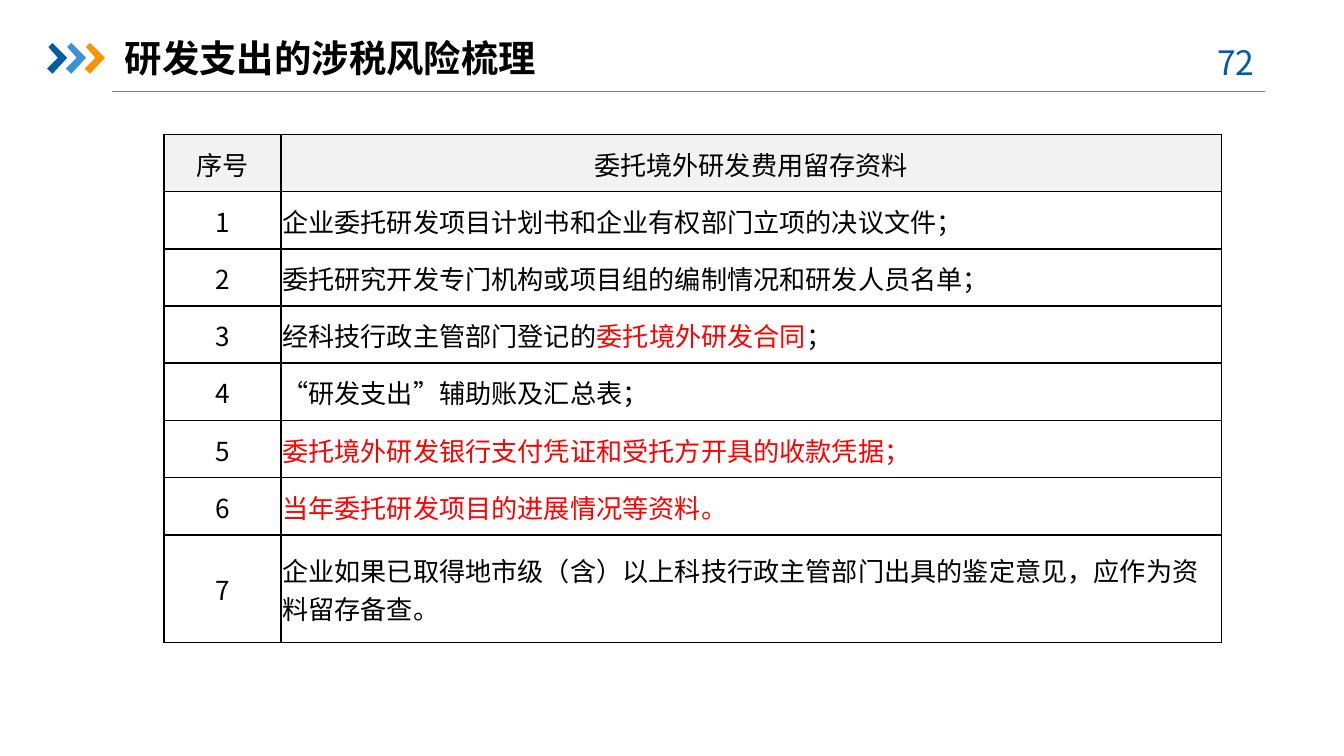
from lxml import etree
from pptx import Presentation
from pptx import util as u
from pptx.dml.color import RGBColor
from pptx.enum import lang, shapes, text
from pptx.oxml import ns

FONT = "Noto Sans CJK SC"
BLACK = RGBColor(0x00, 0x00, 0x00)
WHITE = RGBColor(0xFF, 0xFF, 0xFF)
RED = RGBColor(0xFF, 0x00, 0x00)
GRAY = RGBColor(0x80, 0x80, 0x80)
HEADER_FILL = RGBColor(0xF2, 0xF2, 0xF2)
DEEP_BLUE = RGBColor(0x00, 0x5D, 0xA2)
LIGHT_BLUE = RGBColor(0x39, 0x92, 0xDB)
ORANGE = RGBColor(0xF7, 0x96, 0x00)

HEADER = ("序号", "委托境外研发费用留存资料")
# Each item is a list of (text, colour) spans.
ITEMS = [
    [("企业委托研发项目计划书和企业有权部门立项的决议文件；", BLACK)],
    [("委托研究开发专门机构或项目组的编制情况和研发人员名单；", BLACK)],
    [("经科技行政主管部门登记的", BLACK), ("委托境外研发合同", RED), ("；", BLACK)],
    [("“研发支出”辅助账及汇总表；", BLACK)],
    [("委托境外研发银行支付凭证和受托方开具的收款凭据；", RED)],
    [("当年委托研发项目的进展情况等资料。", RED)],
    [("企业如果已取得地市级（含）以上科技行政主管部门出具的鉴定意见，"
      "应作为资料留存备查。", BLACK)],
]


def set_values(target, values):
    for name, value in values.items():
        setattr(target, name, value)


def write(para, spans, size, align, bold=False):
    """Fill a paragraph with (text, colour) spans."""
    para.alignment = align
    for wording, colour in spans:
        span = para.add_run()
        span.text = wording
        set_values(span.font, {
            "name": FONT, "size": u.Pt(size), "bold": bold,
            "language_id": lang.MSO_LANGUAGE_ID.SIMPLIFIED_CHINESE})
        span.font.color.rgb = colour
        east_asian = etree.SubElement(span._r.get_or_add_rPr(), ns.qn("a:ea"))
        east_asian.set("typeface", FONT)


def add_text(page, box, spans, size, align, bold=False):
    frame = page.shapes.add_textbox(*map(u.Inches, box)).text_frame
    set_values(frame, {"word_wrap": True,
                       "auto_size": text.MSO_AUTO_SIZE.SHAPE_TO_FIT_TEXT})
    write(frame.paragraphs[0], spans, size, align, bold)


def add_chevrons(page, left, top):
    outline = [(0.01, 0.03), (0.04, 0), (0.15, 0.11),
               (0.04, 0.23), (0, 0.19), (0.08, 0.11)]
    for index, colour in enumerate((DEEP_BLUE, LIGHT_BLUE, ORANGE)):
        points = [(u.Inches(left + 0.14 * index + x), u.Inches(top + y))
                  for x, y in outline]
        builder = page.shapes.build_freeform(*points[0])
        builder.add_line_segments(points[1:], close=True)
        chevron = builder.convert_to_shape()
        chevron.shadow.inherit = False
        chevron.fill.solid()
        chevron.fill.fore_color.rgb = colour
        chevron.line.fill.background()


def add_heading(page, left, top, width):
    """Chevrons, title, page number and the rule below them."""
    rule_left, rule_top = left + 0.48, top + 0.47
    rule = page.shapes.add_connector(
        shapes.MSO_CONNECTOR.STRAIGHT,
        *map(u.Inches, (rule_left, rule_top, left + width - 0.18, rule_top)))
    rule.line.color.rgb = GRAY
    rule.line.width = u.Pt(0.75)
    etree.SubElement(rule._element.spPr, ns.qn("a:effectLst"))
    add_chevrons(page, left, top + 0.11)
    add_text(page, (left + width - 0.73, top + 0.05, 0.73, 0.4),
             [("72 ", DEEP_BLUE)], 18, text.PP_ALIGN.CENTER)
    add_text(page, (rule_left, top, 5.93, 0.44),
             [("研发支出的涉税风险梳理", BLACK)], 20, text.PP_ALIGN.LEFT, True)


def add_borders(cell):
    properties = cell._tc.get_or_add_tcPr()
    for index, side in enumerate(("lnL", "lnR", "lnT", "lnB")):
        border = etree.Element(ns.qn(f"a:{side}"), w=str(int(u.Pt(1))))
        fill = etree.SubElement(border, ns.qn("a:solidFill"))
        etree.SubElement(fill, ns.qn("a:srgbClr"), val=str(BLACK))
        properties.insert(index, border)


def fill_cell(cell, spans, align, colour):
    edge = u.Inches(0.01)
    set_values(cell, {
        "margin_left": edge, "margin_right": edge, "margin_top": edge,
        "margin_bottom": 0, "vertical_anchor": text.MSO_ANCHOR.MIDDLE})
    cell.fill.solid()
    cell.fill.fore_color.rgb = colour
    add_borders(cell)
    write(cell.text_frame.paragraphs[0], spans, 14, align)


def add_item_table(page, left, top, width, height):
    center, start = text.PP_ALIGN.CENTER, text.PP_ALIGN.LEFT
    table = page.shapes.add_table(
        len(ITEMS) + 1, 2, *map(u.Inches, (left, top, width, height))).table
    set_values(table, {"first_row": False, "horz_banding": False})
    table.columns[0].width = u.Inches(0.87)
    table.columns[1].width = u.Inches(width - 0.87)
    last_height = 0.8
    row_height = (height - last_height) / len(ITEMS)
    for row in table.rows:
        row.height = u.Inches(row_height)
    table.rows[len(ITEMS)].height = u.Inches(last_height)

    for column, label in enumerate(HEADER):
        fill_cell(table.cell(0, column), [(label, BLACK)], center, HEADER_FILL)
    for number, spans in enumerate(ITEMS, start=1):
        fill_cell(table.cell(number, 0), [(str(number), BLACK)], center, WHITE)
        fill_cell(table.cell(number, 1), spans, start, WHITE)


def main():
    deck = Presentation()
    set_values(deck, {"slide_width": u.Inches(10),
                      "slide_height": u.Inches(10 * 9 / 16)})
    page = deck.slides.add_slide(deck.slide_layouts[6])
    add_heading(page, 0.35, 0.21, 9.24)
    add_item_table(page, 1.22, 1, 7.87, 3.78)
    deck.save("out.pptx")


if __name__ == "__main__":
    main()
